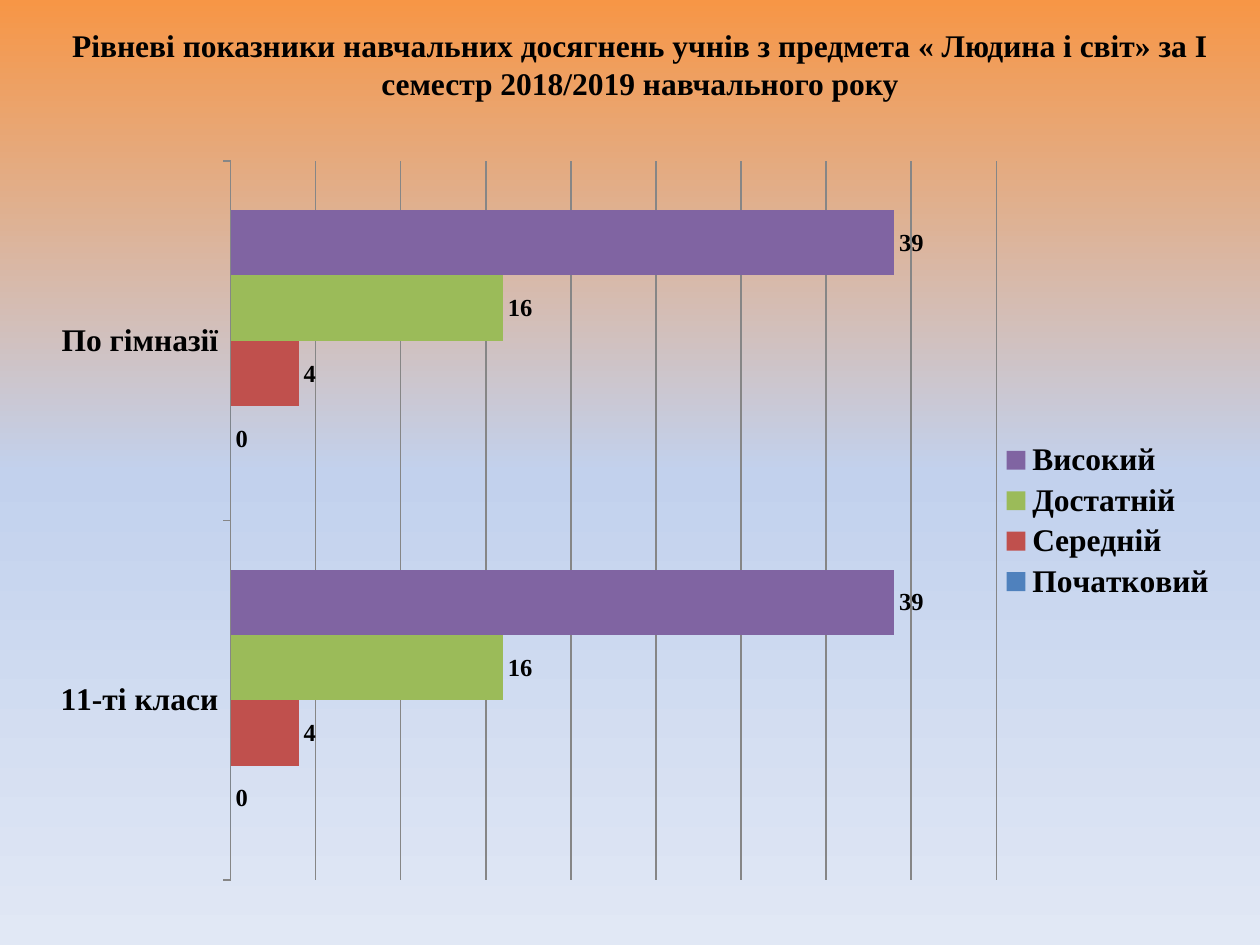
from copy import deepcopy

from lxml import etree
from pptx import Presentation
from pptx.chart.data import CategoryChartData
from pptx.dml.color import RGBColor
from pptx.enum.chart import XL_CHART_TYPE, XL_LABEL_POSITION, XL_LEGEND_POSITION, XL_TICK_MARK
from pptx.enum.text import MSO_ANCHOR, PP_ALIGN
from pptx.oxml.ns import qn
from pptx.util import Inches, Pt

BAR = XL_CHART_TYPE.BAR_CLUSTERED
OUT_END = XL_LABEL_POSITION.OUTSIDE_END
RIGHT = XL_LEGEND_POSITION.RIGHT
OUTSIDE = XL_TICK_MARK.OUTSIDE
MIDDLE = MSO_ANCHOR.MIDDLE
CENTER = PP_ALIGN.CENTER

BLACK = RGBColor(0x00, 0x00, 0x00)
GRAY = RGBColor(0x86, 0x86, 0x86)
ORANGE = RGBColor(0xF7, 0x96, 0x46)
SKY = RGBColor(0xC2, 0xD1, 0xED)
PALE = RGBColor(0xE1, 0xE8, 0xF5)
BLUE = RGBColor(0x4F, 0x81, 0xBD)
RED = RGBColor(0xC0, 0x50, 0x4D)
GREEN = RGBColor(0x9B, 0xBB, 0x59)
PURPLE = RGBColor(0x80, 0x64, 0xA2)

TITLE = ("Рівневі показники навчальних досягнень учнів з предмета "
         "« Людина і світ» за І семестр 2018/2019 навчального року")
GROUPS = ["11-ті класи", "По гімназії"]
LEVELS = [
    ("Початковий", [0, 0], BLUE),
    ("Середній", [4, 4], RED),
    ("Достатній", [16, 16], GREEN),
    ("Високий", [39, 39], PURPLE),
]
PLOT = {"x": 0.161, "y": 0.031, "w": 0.643, "h": 0.937}


class Deck:
    """Holds the text style and the current slide."""

    face = "Times New Roman"
    size = 18

    def __init__(self, wide, high):
        self.prs = Presentation()
        self.prs.slide_width = Inches(wide)
        self.prs.slide_height = Inches(high)
        self.slide = self.prs.slides.add_slide(self.prs.slide_layouts[6])

    def style(self, font, size=size):
        font.name = self.face
        font.size = Pt(size)
        font.bold = True
        font.color.rgb = BLACK

    def backdrop(self, top, mid, low):
        fill = self.slide.background.fill
        fill.gradient()
        fill.gradient_angle = 270
        stops = self.slide.element.find(".//" + qn("a:gsLst"))
        stops.insert(1, deepcopy(stops[0]))
        for i, (stop, color) in enumerate(zip(fill.gradient_stops, (top, mid, low))):
            stop.color.rgb = color
            stop.position = i / 2

    def title(self, text, left, top, wide, high):
        box = self.slide.shapes.add_textbox(
            Inches(left), Inches(top), Inches(wide), Inches(high))
        frame = box.text_frame
        frame.word_wrap = True
        frame.vertical_anchor = MIDDLE
        frame.text = text
        para = frame.paragraphs[0]
        para.alignment = CENTER
        self.style(para.runs[0].font)

    def bars(self, groups, levels, left, top, wide, high):
        data = CategoryChartData()
        data.categories = groups
        for name, vals, _ in levels:
            data.add_series(name, vals)
        chart = self.slide.shapes.add_chart(
            BAR, Inches(left), Inches(top), Inches(wide), Inches(high), data).chart
        chart.has_title = False
        chart.font.name = "Calibri"
        chart.font.size = Pt(self.size)
        chart.font.color.rgb = BLACK
        plot = chart.plots[0]
        plot.gap_width = 150
        plot.overlap = 0
        plot.vary_by_categories = False
        for row, (_, _, color) in zip(plot.series, levels):
            row.format.fill.solid()
            row.format.fill.fore_color.rgb = color
            tags = row.data_labels
            tags.show_value = True
            tags.position = OUT_END
            self.style(tags.font, 14)
        self.axes(chart)
        chart.has_legend = True
        chart.legend.position = RIGHT
        chart.legend.include_in_layout = False
        self.style(chart.legend.font)
        self.place(chart, PLOT)

    def axes(self, chart):
        cats, vals = chart.category_axis, chart.value_axis
        cats.major_tick_mark = OUTSIDE
        self.style(cats.tick_labels.font)
        vals.visible = False
        vals.has_major_gridlines = True
        vals.minimum_scale, vals.maximum_scale, vals.major_unit = 0, 45, 5
        for line in (cats.format.line, vals.major_gridlines.format.line):
            line.color.rgb = GRAY
            line.width = Pt(0.75)

    def place(self, chart, spots):
        area = chart.element.find(".//" + qn("c:plotArea"))
        for old in area.findall(qn("c:layout")):
            area.remove(old)
        layout = etree.Element(qn("c:layout"))
        area.insert(0, layout)
        manual = etree.SubElement(layout, qn("c:manualLayout"))
        rules = {"layoutTarget": "inner", "xMode": "edge", "yMode": "edge", **spots}
        for tag, val in rules.items():
            etree.SubElement(manual, qn("c:" + tag), val=str(val))


def main():
    deck = Deck(10, 7.5)
    deck.backdrop(ORANGE, SKY, PALE)
    deck.title(TITLE, 0.47, 0.23, 9.22, 0.55)
    deck.bars(GROUPS, LEVELS, 0.31, 1.09, 9.45, 6.09)
    deck.prs.save("out.pptx")


if __name__ == "__main__":
    main()
